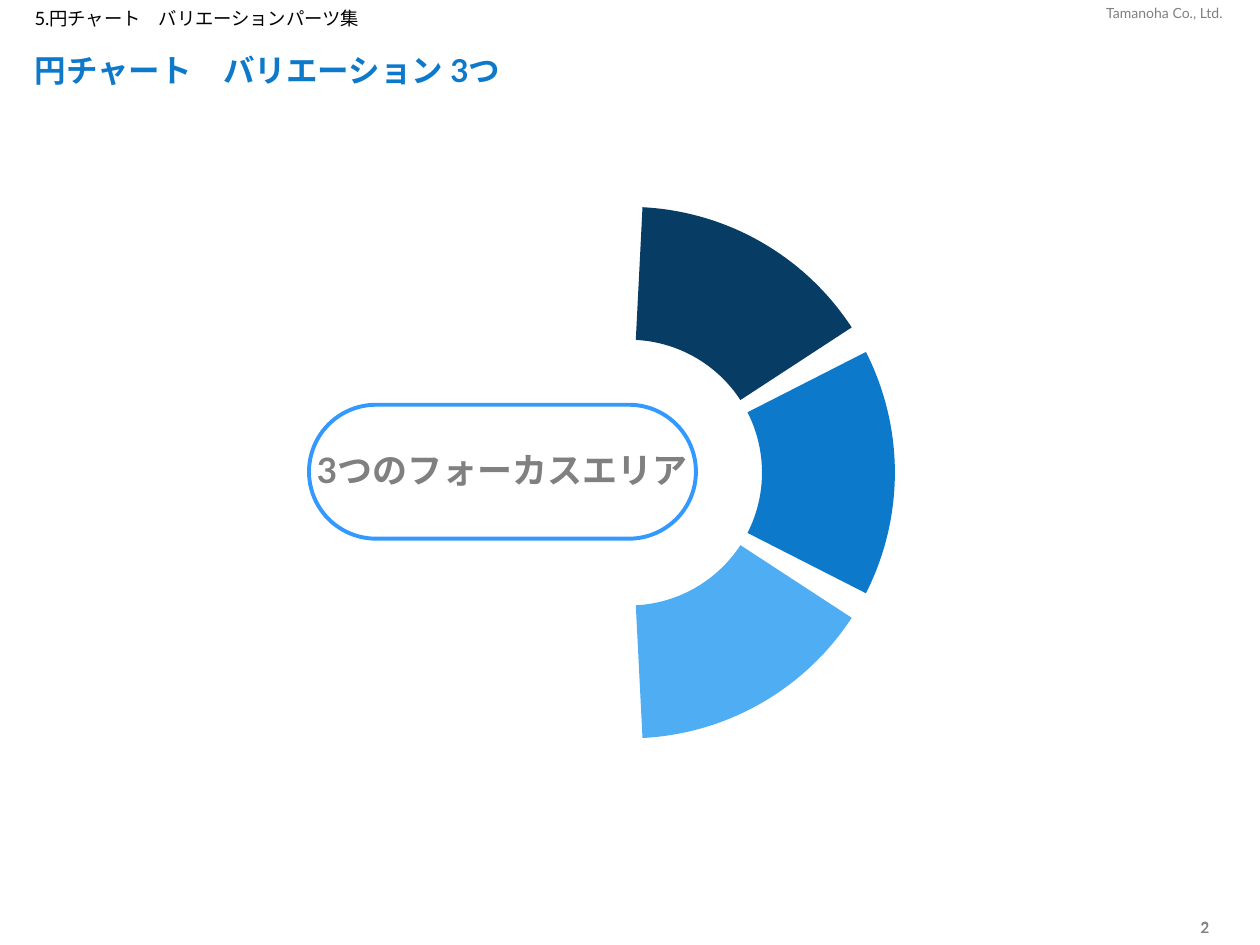
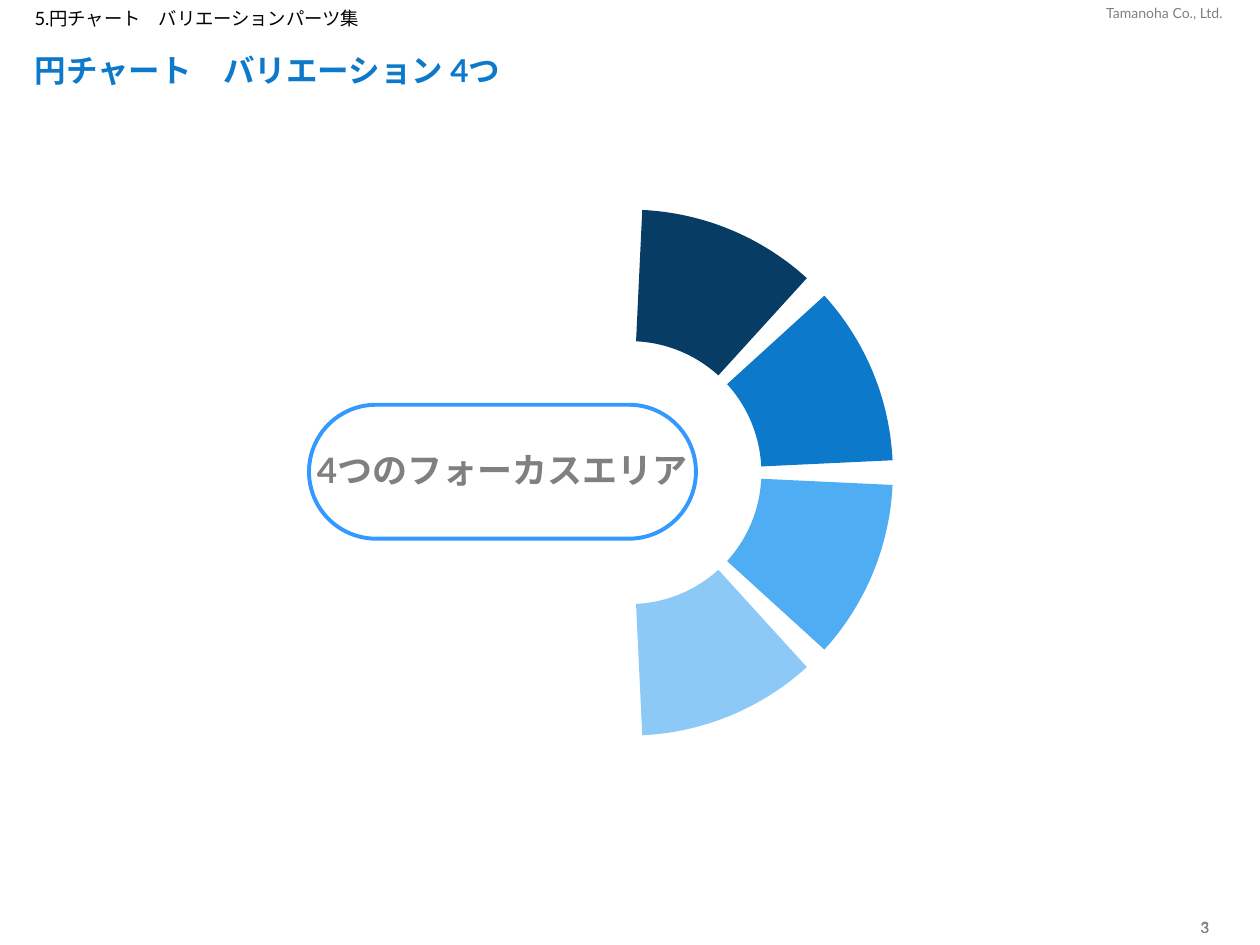
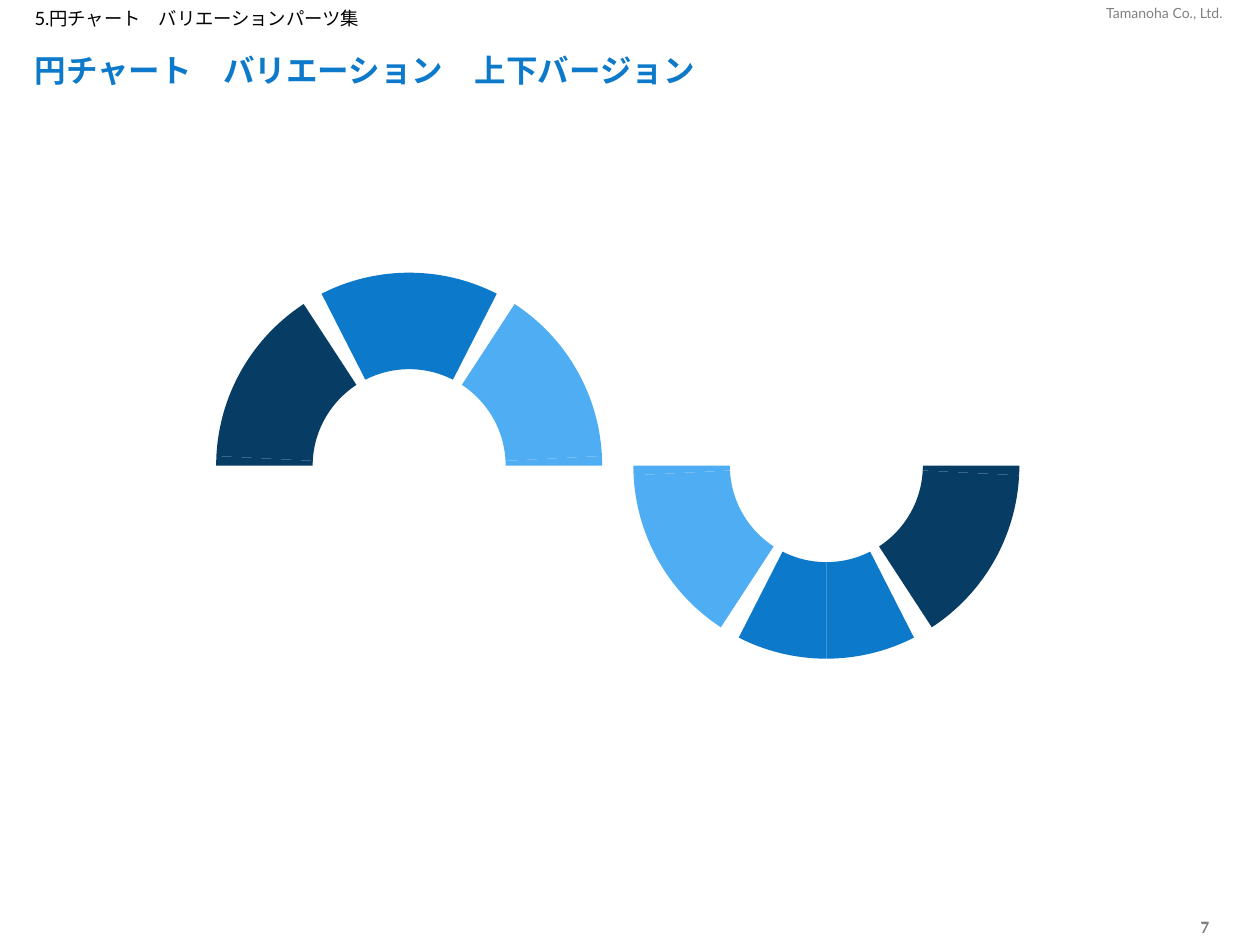
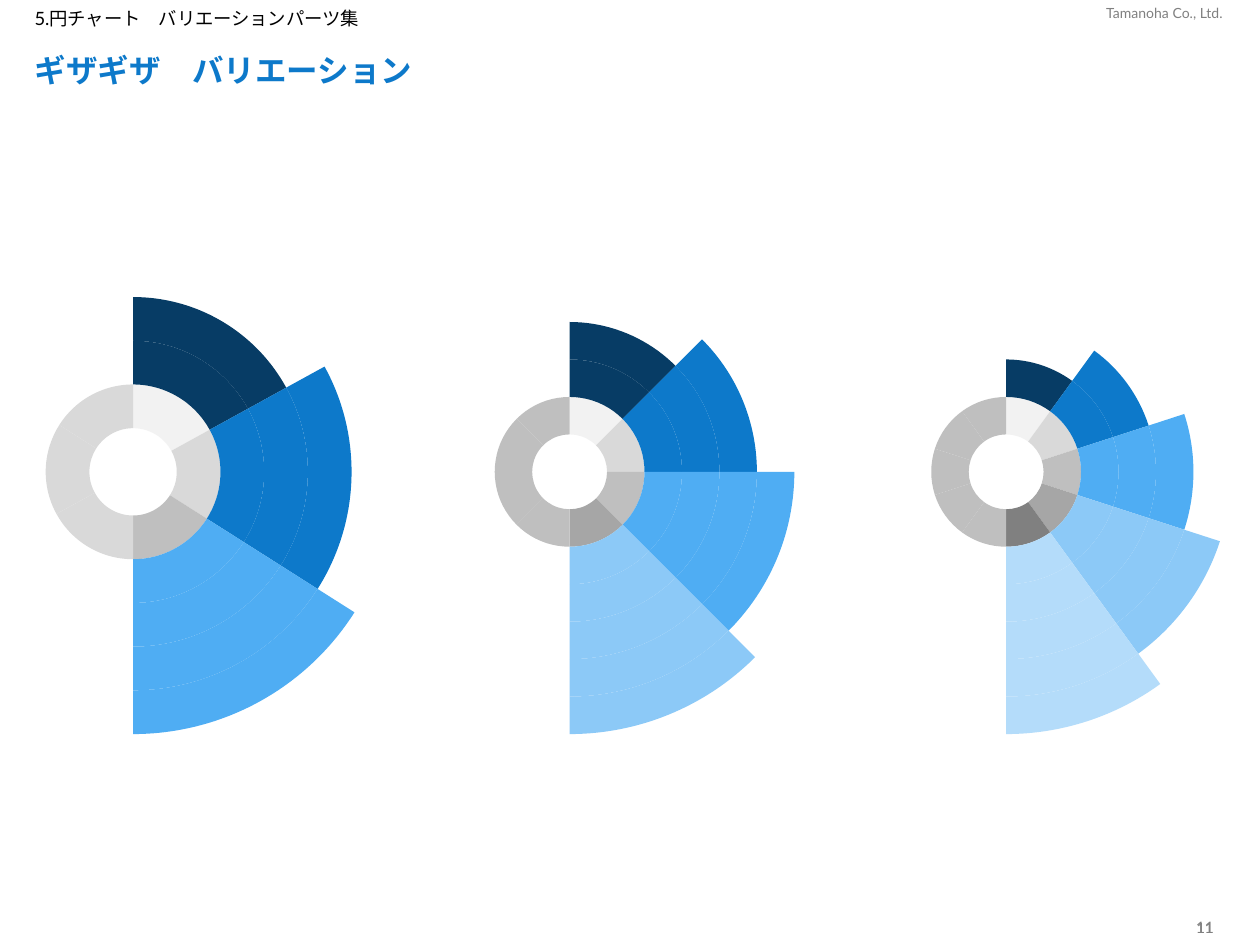
from dataclasses import dataclass
from typing import Optional

from lxml.etree import SubElement
from pptx import Presentation
from pptx.chart.data import CategoryChartData
from pptx.chart.point import Point
from pptx.dml.color import RGBColor
from pptx.enum.chart import XL_CHART_TYPE as ChartType
from pptx.enum.shapes import MSO_SHAPE as Preset
from pptx.enum.text import MSO_ANCHOR as Anchor, MSO_AUTO_SIZE as AutoSize, PP_ALIGN as Align
from pptx.oxml.ns import qn
from pptx.slide import Slide
from pptx.text.text import TextFrame
from pptx.util import Cm, Pt

FONT = "Lato"
NAVY, BLUE, LIGHT, PALE, PALEST = SHADES = ["073C65", "0D79CA", "4FADF3", "8CC9F7", "B4DCFA"]
GREYS = ["F2F2F2", "D9D9D9", "BFBFBF", "A6A6A6", "808080"]
GREY, BLACK, WHITE, OUTLINE = "808080", "000000", "FFFFFF", "3399FF"
SECTION = "5.円チャート　バリエーションパーツ集"
COMPANY = "Tamanoha Co., Ltd."

Colours = list[Optional[str]]
Values = list[Optional[float]]


@dataclass(frozen=True)
class Box:
    """Place and size in centimetres."""
    left: float
    top: float
    width: float
    height: float

    def lengths(self) -> tuple[Cm, Cm, Cm, Cm]:
        """Return the four lengths that python-pptx expects."""
        return Cm(self.left), Cm(self.top), Cm(self.width), Cm(self.height)


@dataclass(frozen=True)
class TextStyle:
    """Look of a one-line text."""
    size: float
    colour: str
    bold: bool = False
    align: Align = Align.LEFT
    anchor: Anchor = Anchor.MIDDLE
    inset: float = 0.13
    spacing: Optional[float] = 0.9
    wrap: bool = True
    grow: bool = False


@dataclass(frozen=True)
class Ring:
    """Values and slice colours of one doughnut series."""
    values: Values
    colours: Colours


TITLE = TextStyle(18, BLUE, bold=True)
HEADER = TextStyle(10.5, BLACK)
FOCUS = TextStyle(20, GREY, bold=True, align=Align.CENTER, wrap=False)
OWNER = TextStyle(8, GREY, inset=0, spacing=None, wrap=False, grow=True)
PAGE_NUMBERS = {
    size: TextStyle(size, GREY, align=Align.CENTER, anchor=Anchor.TOP,
                    inset=0, spacing=None, grow=True)
    for size in (9, 8)
}
PAGE_BOXES = {9: Box(23.87, 18.5, 0.84, 0.38), 8: Box(23.87, 18.53, 0.84, 0.33)}


def rgb(colour: str) -> RGBColor:
    """Turn a hex string into a colour."""
    return RGBColor.from_string(colour)


def write(frame: TextFrame, text: str, style: TextStyle) -> None:
    """Write one styled run into a text frame."""
    frame.auto_size = AutoSize.SHAPE_TO_FIT_TEXT if style.grow else AutoSize.NONE
    frame.word_wrap = style.wrap
    frame.vertical_anchor = style.anchor
    frame.margin_left = frame.margin_right = 0
    frame.margin_top = frame.margin_bottom = Cm(style.inset)
    paragraph = frame.paragraphs[0]
    paragraph.alignment = style.align
    paragraph.line_spacing = style.spacing
    run = paragraph.add_run()
    run.text = text
    run.font.name, run.font.size, run.font.bold = FONT, Pt(style.size), style.bold
    run.font.color.rgb = rgb(style.colour)


def add_text(slide: Slide, box: Box, text: str, style: TextStyle) -> None:
    """Add a text box."""
    write(slide.shapes.add_textbox(*box.lengths()).text_frame, text, style)


def add_page(deck: Presentation, title: str, number: int) -> Slide:
    """Add a slide with the shared header, title and page number."""
    slide = deck.slides.add_slide(deck.slide_layouts[6])
    for size, style in PAGE_NUMBERS.items():
        add_text(slide, PAGE_BOXES[size], str(number), style)
    add_text(slide, Box(22.3, 0.1, 2.39, 0.33), COMPANY, OWNER)
    add_text(slide, Box(0.7, 0.71, 24, 1.5), title, TITLE)
    add_text(slide, Box(0.7, 0.1, 11, 0.61), SECTION, HEADER)
    return slide


def add_focus(slide: Slide, text: str) -> None:
    """Add the rounded label in the middle of the half ring."""
    pill = slide.shapes.add_shape(Preset.ROUNDED_RECTANGLE, *Box(6.23, 8.16, 7.8, 2.7).lengths())
    pill.adjustments[0] = 0.5
    pill.shadow.inherit = False
    pill.fill.solid()
    pill.fill.fore_color.rgb = rgb(WHITE)
    pill.line.color.rgb = rgb(OUTLINE)
    pill.line.width = Pt(2.25)
    write(pill.text_frame, text, FOCUS)


def fit_plot(plot_area, box: Box, share: float) -> None:
    """Centre a round plot whose diameter is a share of the chart height."""
    for old in plot_area.findall(qn("c:layout")):
        plot_area.remove(old)
    width = share * box.height / box.width
    layout = SubElement(plot_area, qn("c:layout"))
    plot_area.insert(0, layout)
    manual = SubElement(layout, qn("c:manualLayout"))
    settings = {
        "layoutTarget": "inner", "xMode": "edge", "yMode": "edge",
        "x": (1 - width) / 2, "y": (1 - share) / 2, "w": width, "h": share,
    }
    for tag, value in settings.items():
        SubElement(manual, qn(f"c:{tag}")).set("val", str(value))


def add_doughnut(slide: Slide, box: Box, rings: list[Ring], share: float = 0.94) -> None:
    """Add a doughnut chart, rings listed from the inside out."""
    data = CategoryChartData()
    data.categories = ["1", "2", "3", "4"]
    for order, ring in enumerate(rings, 1):
        data.add_series(f"Series {order}", ring.values)
    chart = slide.shapes.add_chart(ChartType.DOUGHNUT, *box.lengths(), data).chart
    chart.has_legend = chart.has_title = False
    chart.font.name, chart.font.size = FONT, Pt(10)
    chart.font.color.rgb = rgb(BLACK)
    chart.plots[0].vary_by_categories = True
    plot_area = chart.element.find(".//" + qn("c:plotArea"))
    plot_area.find(".//" + qn("c:holeSize")).set("val", "25")
    fit_plot(plot_area, box, share)
    for series, ring in zip(plot_area.iter(qn("c:ser")), rings):
        for index, colour in enumerate(ring.colours):
            look = Point(series, index).format
            look.line.fill.background()
            if colour:
                look.fill.solid()
                look.fill.fore_color.rgb = rgb(colour)
            else:
                look.fill.background()


def half_ring(count: int, size: float, gap: float, edge: float) -> Ring:
    """Colour the right half of a ring, with gaps around its slices."""
    half = [edge, *([size, gap] * count)[:-1], edge]
    colours: Colours = [None] * (2 * len(half))
    colours[1:2 * count:2] = SHADES[:count]
    return Ring(half * 2, colours)


def jagged_rings(values: Values, count: int, first_reach: int, rest: str) -> list[Ring]:
    """Surround a grey hub with slices that each reach one ring further."""
    slices = sum(value is not None for value in values)
    blank: Colours = [None] * (len(values) - count)
    hub: Colours = [*GREYS[:count], *[rest] * (slices - count)]
    rings = [Ring(values, hub)]
    for level in range(first_reach + count - 1):
        shown = [SHADES[i] if level < first_reach + i else None for i in range(count)]
        rings.append(Ring(values, shown + blank))
    return rings


def main() -> None:
    """Build the four slides."""
    deck = Presentation()
    deck.slide_width, deck.slide_height = Cm(25.4), Cm(19.05)

    for number, ring_box, count, size, gap, edge in (
        (2, Box(4.14, 3.83, 17.09, 11.4), 3, 15, 1.7, 0.8),
        (3, Box(4.23, 3.89, 16.94, 11.28), 4, 11, 1.5, 0.75),
    ):
        slide = add_page(deck, f"円チャート　バリエーション {count}つ", number)
        add_doughnut(slide, ring_box, [half_ring(count, size, gap, edge)])
        add_focus(slide, f"{count}つのフォーカスエリア")

    slide = add_page(deck, "円チャート　バリエーション　上下バージョン", 7)
    quarter = [7.5, 1.7, 15, 0.8]
    arc_values = (quarter + quarter[::-1]) * 2
    upper = [BLUE, None, LIGHT, LIGHT, *[None] * 8, NAVY, NAVY, None, BLUE]
    lower = upper[8:] + upper[:8]
    for left, colours in ((1.9, upper), (10.31, lower)):
        add_doughnut(slide, Box(left, 5.16, 12.7, 8.46), [Ring(arc_values, colours)], 0.92)

    slide = add_page(deck, "ギザギザ　バリエーション", 11)
    fans = (
        jagged_rings([17, 17, 16] * 2, 3, 2, GREYS[1]),
        jagged_rings([12] * 8 + [None], 4, 2, GREYS[2]),
        jagged_rings([10] * 10, 5, 1, GREYS[2]),
    )
    for column, rings in enumerate(fans):
        add_doughnut(slide, Box(-5.75 + 8.8 * column, 3.89, 16.87, 11.25), rings)

    deck.save("out.pptx")


if __name__ == "__main__":
    main()
